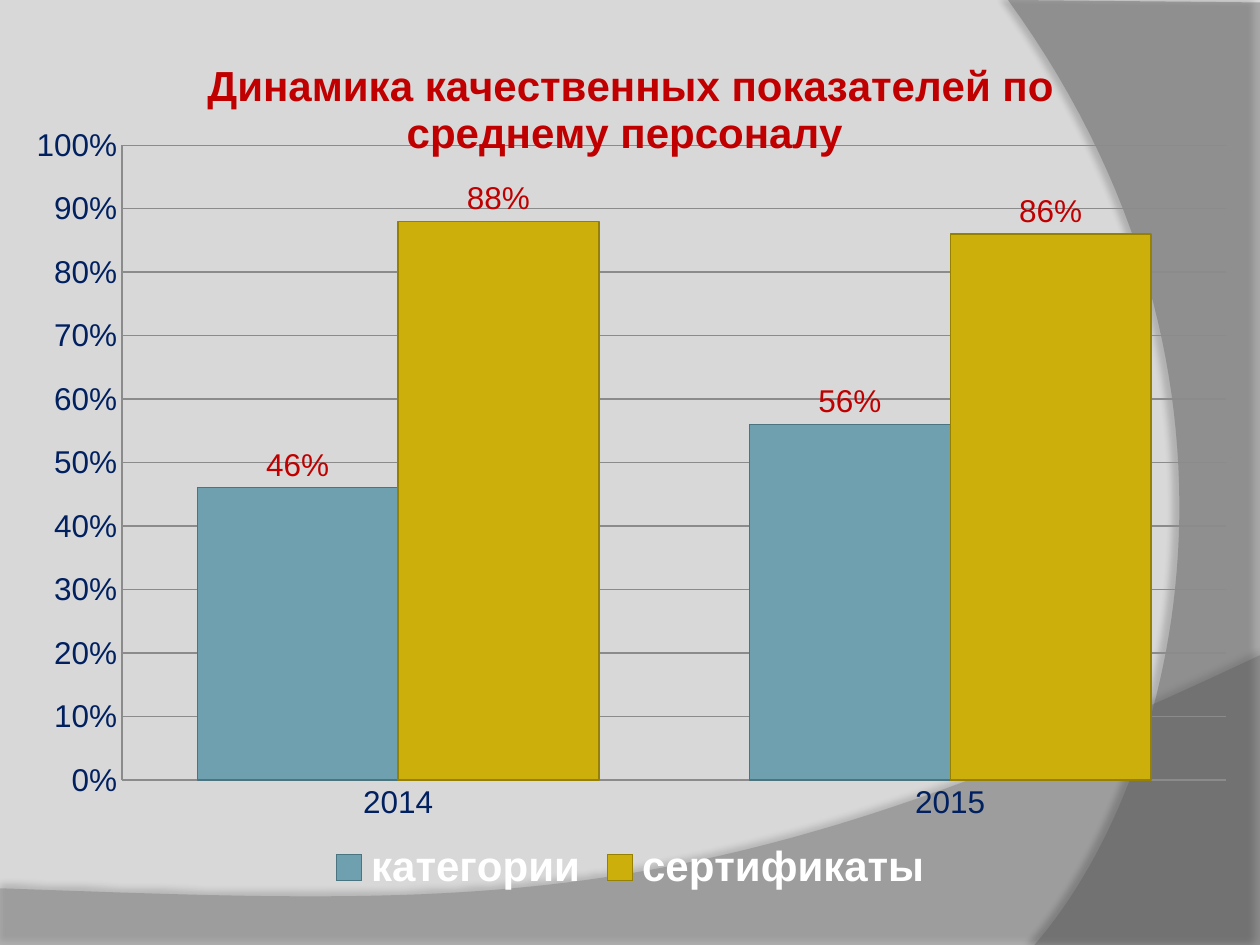
from lxml import etree
from pptx import Presentation
from pptx.chart.data import CategoryChartData
from pptx.dml.color import RGBColor
from pptx.enum.chart import XL_CHART_TYPE, XL_LABEL_POSITION, XL_LEGEND_POSITION, XL_TICK_MARK
from pptx.oxml import parse_xml
from pptx.oxml.ns import nsdecls, qn
from pptx.util import Inches, Pt

COLUMNS = XL_CHART_TYPE.COLUMN_CLUSTERED
OUTSIDE_END = XL_LABEL_POSITION.OUTSIDE_END
BOTTOM = XL_LEGEND_POSITION.BOTTOM
NO_TICKS = XL_TICK_MARK.NONE
NAVY, RED, WHITE, GRID_GRAY = "002060", "C00000", "FFFFFF", "8B8B8B"


def rgb(color):
    return RGBColor.from_string(color)


def curve(start, pull_a, pull_b, end, steps=60):
    points = []
    for step in range(steps + 1):
        t = step / steps
        weights = ((1 - t) ** 3, 3 * t * (1 - t) ** 2, 3 * t ** 2 * (1 - t), t ** 3)
        points.append(tuple(
            sum(w * p[axis] for w, p in zip(weights, (start, pull_a, pull_b, end)))
            for axis in (0, 1)
        ))
    return points


prs = Presentation()
prs.slide_width = Inches(10)
prs.slide_height = Inches(7.5)
slide = prs.slides.add_slide(prs.slide_layouts[6])
slide.background.fill.solid()
slide.background.fill.fore_color.rgb = rgb("D8D8D8")

bottom_wave = [(0, 7.05), (0, 7.51), (10, 7.51)] + curve((10, 5.2), (5.59, 7.29), (3.91, 7.19), (0, 7.05))
right_wave = [(10, 0.02), (10, 7.5)] + curve((8.21, 7.5), (9.35, 6.19), (10.18, 3), (8, 0))
waves = [
    (bottom_wave, "7F7F7F", 45, 35, 3.5, 270),
    (right_wave, "5E5E5E", 40, 45, 4, 180),
]
for outline, color, opacity, shadow_opacity, distance, angle in waves:
    points = [(Inches(x), Inches(y)) for x, y in outline]
    builder = slide.shapes.build_freeform(*points[0])
    builder.add_line_segments(points[1:], close=True)
    wave = builder.convert_to_shape()
    wave.fill.solid()
    wave.fill.fore_color.rgb = rgb(color)
    wave.line.fill.background()
    wave.shadow.inherit = False
    properties = wave.element.spPr
    tint = properties.find(qn("a:solidFill")).find(qn("a:srgbClr"))
    etree.SubElement(tint, qn("a:alpha"), val=str(opacity * 1000))
    properties.find(qn("a:effectLst")).append(parse_xml(
        f'<a:outerShdw {nsdecls("a")} blurRad="{Pt(4)}" dist="{Pt(distance)}" '
        f'dir="{angle * 60000}" algn="ctr" rotWithShape="0"><a:srgbClr val="000000">'
        f'<a:alpha val="{shadow_opacity * 1000}"/></a:srgbClr></a:outerShdw>'
    ))

indicators = CategoryChartData(number_format="0%")
indicators.categories = ["2014", "2015"]
indicators.add_series("категории", (0.46, 0.56))
indicators.add_series("сертификаты", (0.88, 0.86))
chart = slide.shapes.add_chart(
    COLUMNS, Inches(0.2), Inches(0.21), Inches(9.61), Inches(6.93), indicators
).chart
chart.font.name = "Arial"
chart.font.size = Pt(18)
chart.font.color.rgb = rgb(WHITE)

chart.has_title = True
title = chart.chart_title.text_frame.paragraphs[0].add_run()
title.text = "Динамика качественных показателей по среднему персоналу "
title.font.name = "Arial"
title.font.size = Pt(24)
title.font.bold = True
title.font.color.rgb = rgb(RED)

chart.has_legend = True
chart.legend.position = BOTTOM
chart.legend.include_in_layout = False
chart.legend.font.name = "Arial"
chart.legend.font.size = Pt(24)
chart.legend.font.bold = True
chart.legend.font.color.rgb = rgb(WHITE)

years, shares = chart.category_axis, chart.value_axis
shares.minimum_scale, shares.maximum_scale, shares.major_unit = 0, 1, 0.1
shares.tick_labels.number_format = "0%"
shares.tick_labels.number_format_is_linked = False
shares.has_major_gridlines = True
for axis in (years, shares):
    axis.major_tick_mark = axis.minor_tick_mark = NO_TICKS
    axis.tick_labels.font.name = "Arial"
    axis.tick_labels.font.size = Pt(18)
    axis.tick_labels.font.color.rgb = rgb(NAVY)
for rule in (years.format.line, shares.format.line, shares.major_gridlines.format.line):
    rule.color.rgb = rgb(GRID_GRAY)
    rule.width = Pt(0.75)

plot = chart.plots[0]
plot.gap_width = 75
plot.overlap = 0
plot.vary_by_categories = False
for series, (fill, edge) in zip(plot.series, [("6EA0B0", "4A7480"), ("CCAF0A", "958000")]):
    series.format.fill.solid()
    series.format.fill.fore_color.rgb = rgb(fill)
    series.format.line.color.rgb = rgb(edge)
    series.format.line.width = Pt(0.75)
    labels = series.data_labels
    labels.show_value = True
    labels.position = OUTSIDE_END
    labels.number_format = "0%"
    labels.number_format_is_linked = False
    labels.font.name = "Arial"
    labels.font.size = Pt(18)
    labels.font.color.rgb = rgb(RED)

plot_area = chart.element.find(qn("c:chart")).find(qn("c:plotArea"))
for automatic in plot_area.findall(qn("c:layout")):
    plot_area.remove(automatic)
plot_area.insert(0, parse_xml(
    f'<c:layout {nsdecls("c")}><c:manualLayout><c:layoutTarget val="inner"/>'
    '<c:xMode val="edge"/><c:yMode val="edge"/>'
    '<c:x val="0.08"/><c:y val="0.136"/><c:w val="0.912"/><c:h val="0.727"/>'
    '</c:manualLayout></c:layout>'
))

prs.save("out.pptx")
